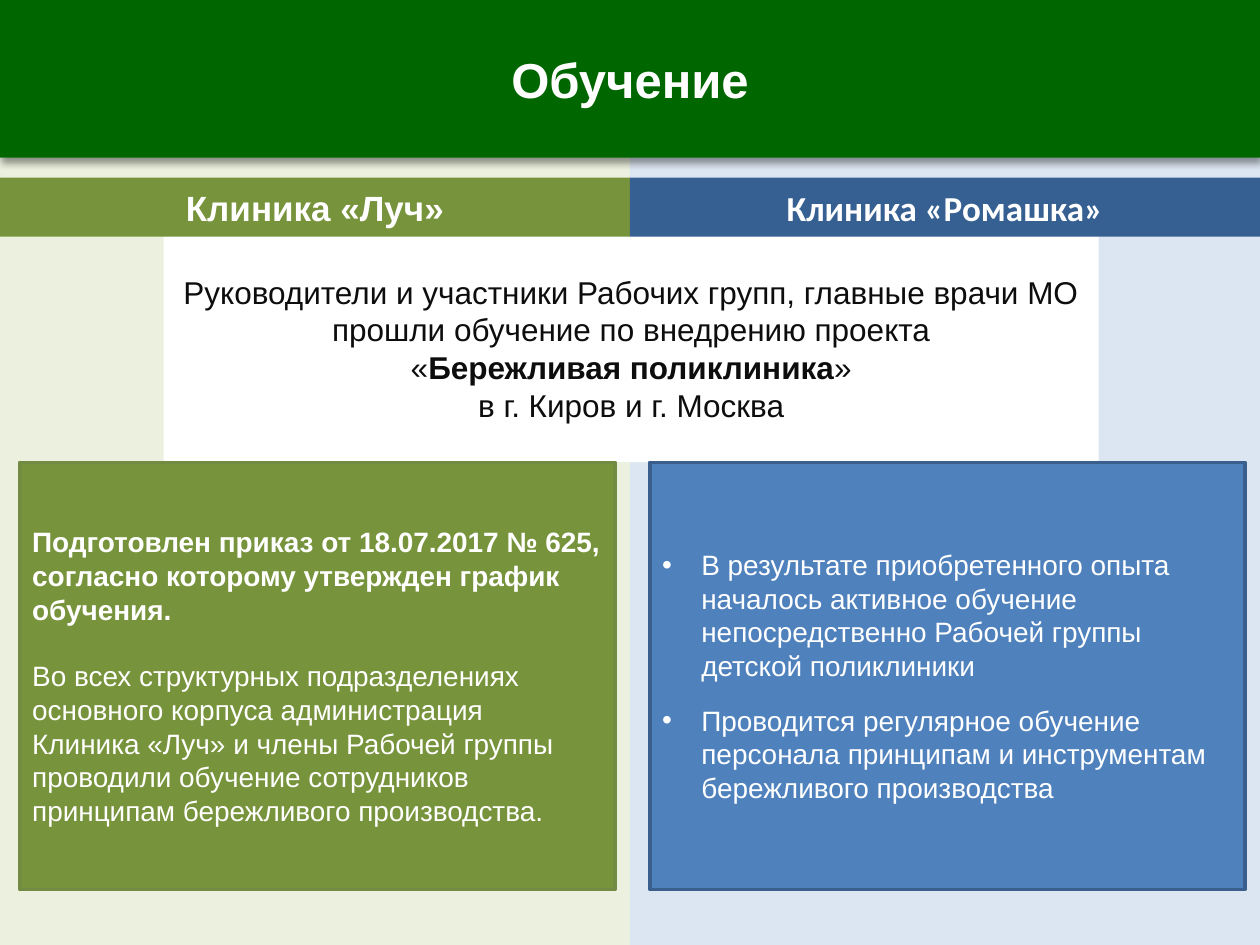
from lxml.etree import SubElement
from pptx import Presentation
from pptx.dml.color import RGBColor
from pptx.enum.shapes import MSO_SHAPE
from pptx.enum.text import MSO_ANCHOR, PP_ALIGN
from pptx.oxml.ns import qn
from pptx.util import Cm, Pt

WHITE = RGBColor(0xFF, 0xFF, 0xFF)
INK = RGBColor(0x0D, 0x0D, 0x0D)
DARK_GREEN = RGBColor(0x00, 0x66, 0x00)
GREEN = RGBColor(0x77, 0x93, 0x3C)
GREEN_EDGE = RGBColor(0x73, 0x8A, 0x42)
PALE_GREEN = RGBColor(0xEB, 0xF1, 0xDE)
BLUE = RGBColor(0x4F, 0x81, 0xBD)
BLUE_EDGE = RGBColor(0x3A, 0x5F, 0x8C)
NAVY = RGBColor(0x37, 0x60, 0x92)
PALE_BLUE = RGBColor(0xDC, 0xE6, 0xF2)

WIDTH, HEIGHT = 25.4, 19.05
HALF = WIDTH / 2
TITLE_HEIGHT = 3.18
COLUMN_TOP = 3.58
ADULT_CLINIC = "Клиника «Луч»"
CHILD_CLINIC = "Клиника «Ромашка»"


def add_box(s, left, top, width, height, fill, edge=None):
    sp = s.shapes.add_shape(MSO_SHAPE.RECTANGLE, Cm(left), Cm(top), Cm(width), Cm(height))
    sp.shadow.inherit = False
    sp.fill.solid()
    sp.fill.fore_color.rgb = fill
    if edge is None:
        sp.line.fill.background()
    else:
        sp.line.color.rgb = edge
        sp.line.width = Pt(2)
    sp.text_frame.word_wrap = True
    sp.text_frame.vertical_anchor = MSO_ANCHOR.MIDDLE
    return sp


def style(p, size, color=WHITE, bold=False, align=PP_ALIGN.CENTER, font="Arial"):
    p.alignment = align
    p.font.name = font
    p.font.size = Pt(size)
    p.font.bold = bold
    p.font.color.rgb = color


def add_bullet(p):
    pPr = p._p.get_or_add_pPr()
    indent = Cm(0.79)
    pPr.set("marL", str(indent))
    pPr.set("indent", str(-indent))
    bullet_font = pPr.makeelement(qn("a:buFont"), {"typeface": "Arial"})
    bullet = pPr.makeelement(qn("a:buChar"), {"char": "•"})
    position = list(pPr).index(pPr.find(qn("a:defRPr")))
    pPr.insert(position, bullet_font)
    pPr.insert(position + 1, bullet)


def add_shadow(sp):
    effects = sp._element.spPr.find(qn("a:effectLst"))
    shadow = SubElement(effects, qn("a:outerShdw"), blurRad=str(Pt(4)), dist=str(Pt(3)),
                        dir="5400000", rotWithShape="0")
    color = SubElement(shadow, qn("a:srgbClr"), val="000000")
    SubElement(color, qn("a:alpha"), val="40000")


def add_title(s, left, top, width, height):
    sp = add_box(s, left, top, width, height, DARK_GREEN)
    add_shadow(sp)
    p = sp.text_frame.paragraphs[0]
    p.text = "Обучение"
    style(p, 28, bold=True)


def add_intro(s, left, top, width, height):
    p = add_box(s, left, top, width, height, WHITE).text_frame.paragraphs[0]
    for line in ("Руководители и участники Рабочих групп, главные врачи МО",
                 "прошли обучение по внедрению проекта"):
        p.add_run().text = line
        p.add_line_break()
    p.add_run().text = "«"
    project = p.add_run()
    project.text = "Бережливая поликлиника"
    project.font.bold = True
    p.add_run().text = "»"
    p.add_line_break()
    p.add_run().text = "в г. Киров и г. Москва"
    style(p, 18, INK)


def add_column(s, left, top, width, heading, font, heading_fill, fill, edge):
    p = add_box(s, left, top, width, 1.19, heading_fill).text_frame.paragraphs[0]
    p.text = heading
    style(p, 20, bold=True, font=font)
    return add_box(s, left + 0.4, top + 5.74, width - 0.7, 8.61, fill, edge).text_frame


def add_paragraphs(tf, texts, space_after):
    for i, text in enumerate(texts):
        p = tf.add_paragraph() if i else tf.paragraphs[0]
        p.text = text
        style(p, 16, align=PP_ALIGN.LEFT)
        p.space_after = Pt(space_after)
    return tf.paragraphs


def main():
    prs = Presentation()
    prs.slide_width, prs.slide_height = Cm(WIDTH), Cm(HEIGHT)
    s = prs.slides.add_slide(prs.slide_layouts[6])

    for left, fill in ((0, PALE_GREEN), (HALF, PALE_BLUE)):
        add_box(s, left, TITLE_HEIGHT, HALF, HEIGHT - TITLE_HEIGHT, fill)
    add_title(s, 0, 0, WIDTH, TITLE_HEIGHT)
    add_intro(s, 3.3, 4.72, 18.85, 4.6)

    tf = add_column(s, 0, COLUMN_TOP, HALF, ADULT_CLINIC, "Arial", GREEN, GREEN, GREEN_EDGE)
    order, training = add_paragraphs(tf, (
        "Подготовлен приказ от 18.07.2017 № 625, согласно которому утвержден график обучения.",
        "Во всех структурных подразделениях основного корпуса администрация\v"
        f"{ADULT_CLINIC} и члены Рабочей группы проводили обучение сотрудников "
        "принципам бережливого производства."), 0)
    order.font.bold = True
    order.space_after = Pt(19)

    tf = add_column(s, HALF, COLUMN_TOP, HALF, CHILD_CLINIC, "Calibri", NAVY, BLUE, BLUE_EDGE)
    for p in add_paragraphs(tf, (
            "В результате приобретенного опыта началось активное обучение "
            "непосредственно Рабочей группы детской поликлиники",
            "Проводится регулярное обучение персонала принципам и инструментам "
            "бережливого производства"), 12):
        add_bullet(p)

    prs.save("out.pptx")


if __name__ == "__main__":
    main()
